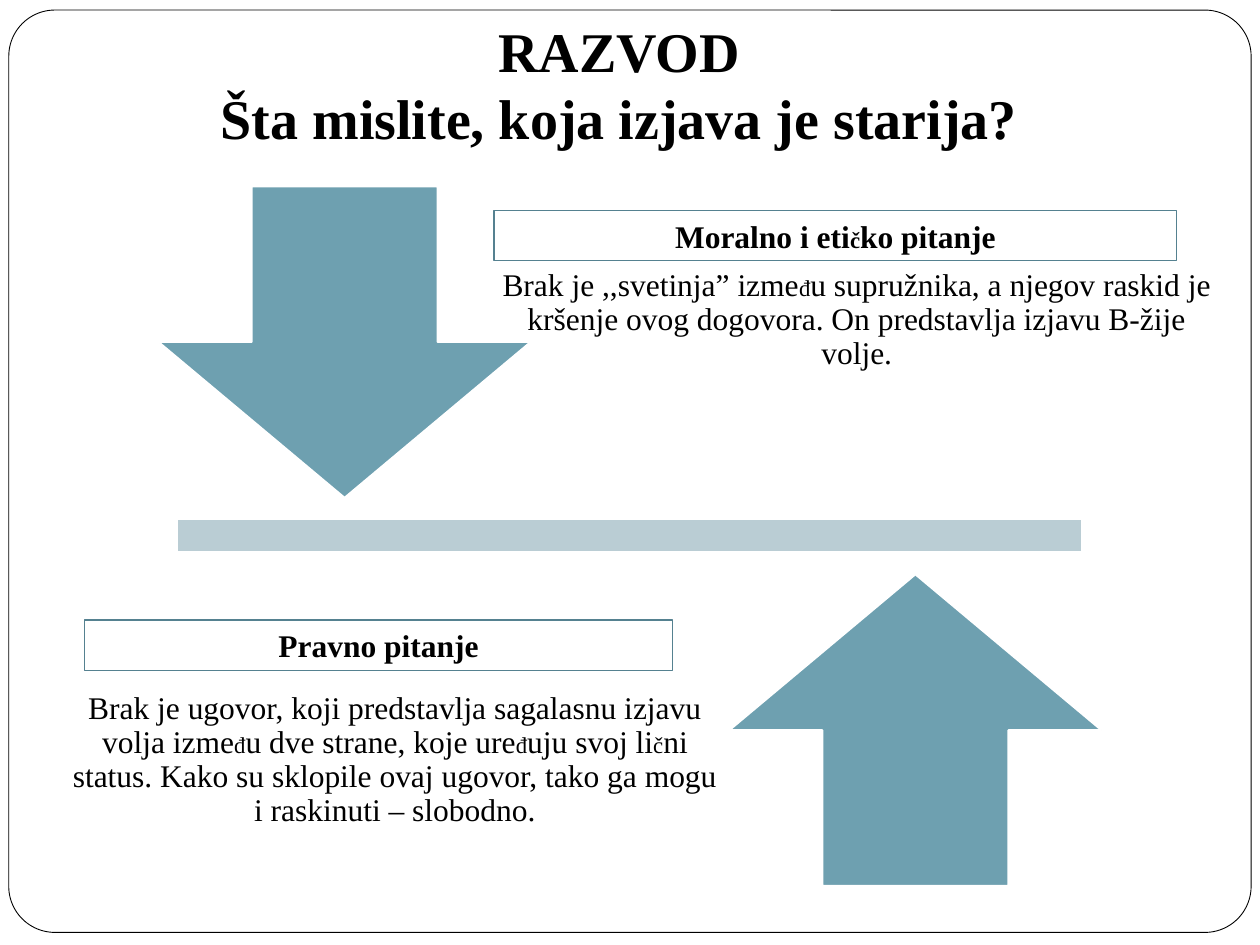
from itertools import groupby
from pptx import Presentation
from pptx.dml.color import RGBColor
from pptx.enum.shapes import MSO_SHAPE
from pptx.enum.text import MSO_ANCHOR, PP_ALIGN
from pptx.util import Inches, Pt

COLORS = {"black": "000000", "white": "FFFFFF", "teal": "6EA0B0",
          "pale": "BACDD4", "edge": "558190"}
FONT = "Times New Roman"
SMALL = "đč"

deck = Presentation()
deck.slide_width, deck.slide_height = Inches(10), Inches(7.5)
slide = deck.slides.add_slide(deck.slide_layouts[6])


def draw(kind, box, fill, line, width):
    shape = slide.shapes.add_shape(kind, *map(Inches, box))
    shape.shadow.inherit = False
    if fill:
        shape.fill.solid()
        shape.fill.fore_color.rgb = RGBColor.from_string(COLORS[fill])
    else:
        shape.fill.background()
    shape.line.color.rgb = RGBColor.from_string(COLORS[line])
    shape.line.width = Pt(width)
    return shape


def write(shape, lines, size=18, bold=False):
    frame = shape.text_frame
    frame.word_wrap = True
    frame.text = "\n".join(lines)
    for par in frame.paragraphs:
        par.alignment = PP_ALIGN.CENTER
        words = par.text
        par.clear()
        for small, chars in groupby(words, lambda char: char in SMALL):
            run = par.add_run()
            run.text = "".join(chars)
            run.font.name = FONT
            run.font.size = Pt(13 if small else size)
            run.font.bold = bold
            run.font.color.rgb = RGBColor.from_string(COLORS["black"])
    return frame


border = draw(MSO_SHAPE.ROUNDED_RECTANGLE, (0.07, 0.08, 9.86, 7.32), "white", "black", 0.5)
border.adjustments[0] = 0.05
draw(MSO_SHAPE.MATH_MINUS, (0.11, 3.69, 9.77, 1.12), "pale", "white", 1)
draw(MSO_SHAPE.DOWN_ARROW, (1.26, 1.48, 2.95, 2.47), "teal", "white", 1)
draw(MSO_SHAPE.UP_ARROW, (5.79, 4.56, 2.95, 2.47), "teal", "white", 1)

bodies = [
    ((3.75, 1.25, 6.1, 2.59),
     "Brak je ,,svetinja” između supružnika, a njegov raskid je kršenje "
     "ovog dogovora. On predstavlja izjavu B-žije volje."),
    ((0.4, 4.74, 5.47, 2.59),
     "Brak je ugovor, koji predstavlja sagalasnu izjavu volja između dve strane, "
     "koje uređuju svoj lični status. Kako su sklopile ovaj ugovor, tako ga mogu "
     "i raskinuti – slobodno."),
]
for box, words in bodies:
    frame = write(slide.shapes.add_textbox(*map(Inches, box)), [words])
    frame.vertical_anchor = MSO_ANCHOR.MIDDLE
    frame.margin_left = frame.margin_right = Inches(0.14)
    frame.margin_top = frame.margin_bottom = Inches(0.14)
    frame.paragraphs[0].line_spacing = 0.9

title = slide.shapes.add_textbox(Inches(0), Inches(0.08), Inches(9.83), Inches(1.18))
write(title, ["RAZVOD", "Šta mislite, koja izjava je starija?"], 32, True)

heads = [
    ((3.92, 1.67, 5.42, 0.4), "Moralno i etičko pitanje"),
    ((0.67, 4.92, 4.67, 0.4), "Pravno pitanje"),
]
for box, words in heads:
    frame = write(draw(MSO_SHAPE.RECTANGLE, box, None, "edge", 0.75), [words], bold=True)
    frame.vertical_anchor = MSO_ANCHOR.TOP

deck.save("out.pptx")
